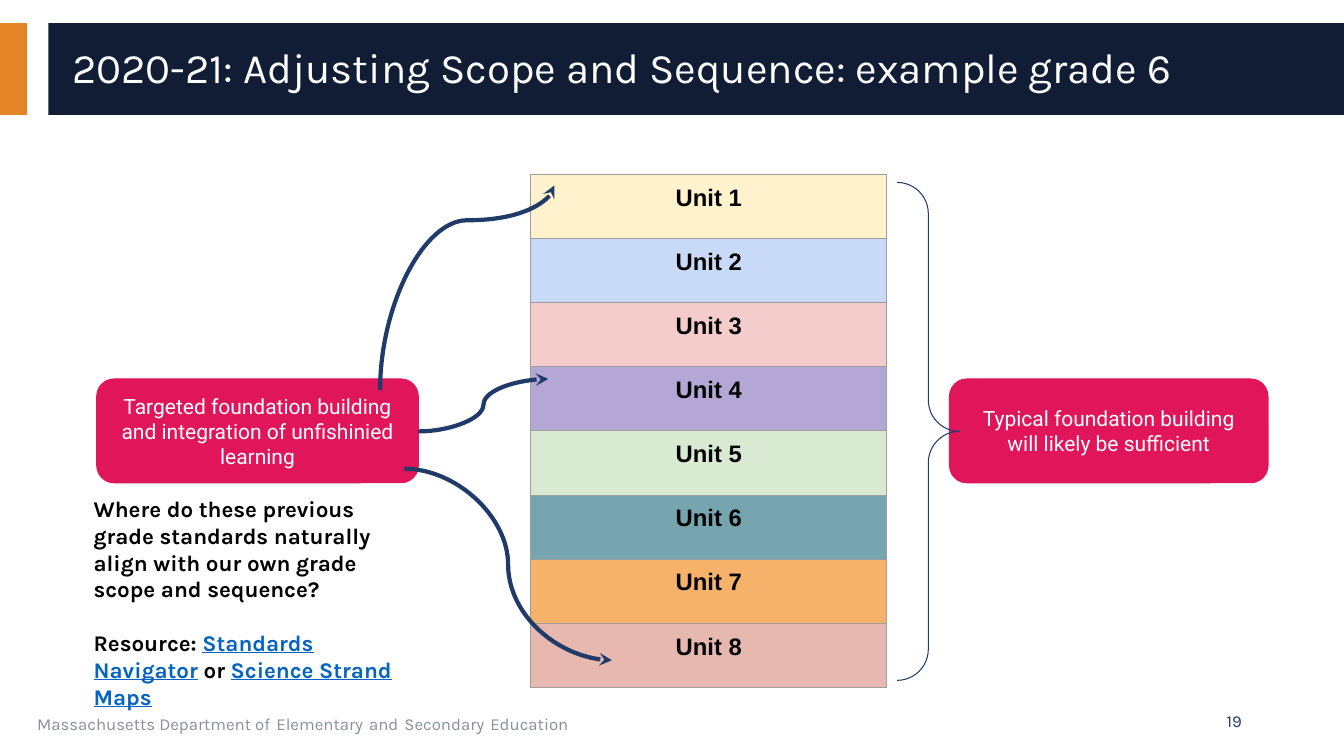
import pptx
import pptx.util
import pptx.dml.color
import pptx.enum.shapes
import pptx.enum.text
from lxml import etree
from pptx.oxml.ns import qn

Pt = pptx.util.Pt
KIND = pptx.enum.shapes.MSO_SHAPE
ALIGN = pptx.enum.text.PP_ALIGN
ANCHOR = pptx.enum.text.MSO_ANCHOR

HUES = {
    "orange": "E38526", "navy": "101D34", "blue": "203B6A", "pink": "E1165A",
    "white": "FFFFFF", "black": "000000", "gray": "8A8FA0", "rule": "9E9E9E",
    "link": "0563C1",
}
TITLE = "2020-21: Adjusting Scope and Sequence: example grade 6"
FOOTER = ["Massachusetts Department of", "Elementary", "and", "Secondary", "Education"]
NUMBER = "19"
UNITS = ["FFF2CC", "C9DAF8", "F4CCCC", "B4A7D6", "D9EAD3", "76A5AF", "F6B26B", "E6B8AF"]
QUESTION = "Where do these previous grade standards naturally align with our own grade scope and sequence?"
RESOURCE = [("Resource: ", False), ("Standards Navigator", True),
            (" or ", False), ("Science Strand Maps", True)]

# Places are percentages of the slide: left, top, width, height
BANDS = [("orange", (0, 3.07, 2.03, 12.13)), ("navy", (3.6, 3.07, 96.4, 12.13))]
PLACES = {
    "title": (4.65, 4.27, 93.3, 9.87),
    "footer": (2.03, 92.67, 63.3, 5.33),
    "number": (70.65, 92.67, 22.5, 5.33),
    "units": (39.5, 23.07, 26.48, 67.87),
    "brace": (66.75, 24.13, 4.65, 65.87),
    "note": (6.23, 64.13, 24.9, 28.53),
}
BOXES = [
    ("Typical foundation building will likely be sufficient", (70.65, 50.13, 23.7, 13.73)),
    ("Targeted foundation building and integration of unfishinied learning",
     (7.2, 50.13, 23.93, 13.73)),
]
# Start, end, share of the bend, whether the arrow sets off upward
ARROWS = [
    ((28.28, 51.6), (41.25, 24.53), 0.83, True),
    ((30.08, 62), (45.53, 87.33), 0.5, False),
    ((31.13, 57.07), (40.8, 50.13), 0.5, False),
]

deck = pptx.Presentation()
deck.slide_width = pptx.util.Inches(13.33)
deck.slide_height = pptx.util.Inches(7.5)
slide = deck.slides.add_slide(deck.slide_layouts[6])
shapes = slide.shapes


def rgb(hue):
    return pptx.dml.color.RGBColor.from_string(HUES.get(hue, hue))


def scale(*shares):
    """Turn alternating x and y percentages into lengths."""
    sides = (deck.slide_width, deck.slide_height)
    return [round(share * sides[i % 2] / 100) for i, share in enumerate(shares)]


def style(font, size, hue, name="Karla", bold=False):
    font.size, font.name, font.bold = Pt(size), name, bold
    font.color.rgb = rgb(hue)


def frame(shape, side, top, anchor=ANCHOR.TOP):
    body = shape.text_frame
    body.word_wrap = True
    body.margin_left = body.margin_right = pptx.util.Inches(side)
    body.margin_top = body.margin_bottom = pptx.util.Inches(top)
    body.vertical_anchor = anchor
    return body


def label(name, top=0.05, anchor=ANCHOR.TOP):
    return frame(shapes.add_textbox(*scale(*PLACES[name])), 0.1, top, anchor)


def draw(kind, place, fill=None, line=None):
    shape = shapes.add_shape(kind, *scale(*place))
    shape.shadow.inherit = False
    if fill:
        shape.fill.solid()
        shape.fill.fore_color.rgb = rgb(fill)
    else:
        shape.fill.background()
    if line:
        shape.line.color.rgb = rgb(line)
        shape.line.width = Pt(0.75)
    else:
        shape.line.fill.background()
    return shape


def edge(cell):
    """Rule all four sides of a cell; borders go ahead of its fill."""
    props = cell._tc.get_or_add_tcPr()
    for spot, side in enumerate(("a:lnL", "a:lnR", "a:lnT", "a:lnB")):
        line = etree.Element(qn(side), w=str(Pt(0.75)))
        fill = etree.SubElement(line, qn("a:solidFill"))
        etree.SubElement(fill, qn("a:srgbClr"), val=HUES["rule"])
        props.insert(spot, line)


def arrow(start, end, bend, upward):
    x1, y1, x2, y2 = scale(*start, *end)
    if upward:
        # A quarter turn swaps the width and height about the same centre
        mx, my = (x1 + x2) // 2, (y1 + y2) // 2
        dx, dy = abs(y2 - y1) // 2, abs(x2 - x1) // 2
        x1, y1, x2, y2 = mx - dx, my - dy, mx + dx, my + dy
    link = shapes.add_connector(pptx.enum.shapes.MSO_CONNECTOR.CURVE, x1, y1, x2, y2)
    link.line.color.rgb = rgb("blue")
    link.line.width = Pt(3)
    props = link._element.spPr
    if upward:
        props.find(qn("a:xfrm")).set("rot", str(270 * 60000))
    guides = props.find(qn("a:prstGeom")).get_or_add_avLst()
    etree.SubElement(guides, qn("a:gd"), name="adj1", fmla=f"val {round(bend * 100000)}")
    etree.SubElement(props.find(qn("a:ln")), qn("a:tailEnd"), type="stealth")
    etree.SubElement(props, qn("a:effectLst"))


for hue, place in BANDS:
    draw(KIND.RECTANGLE, place, hue)

para = label("footer").paragraphs[0]
for i, word in enumerate(FOOTER):
    if i:
        gap = para.add_run()
        gap.text = " "
        style(gap.font, 18, "blue")
    run = para.add_run()
    run.text = word
    style(run.font, 12, "gray")

place = scale(*PLACES["units"])
table = shapes.add_table(len(UNITS), 1, *place).table
table.first_row = table.horz_banding = False
for i, hue in enumerate(UNITS):
    table.rows[i].height = place[3] // len(UNITS)
    cell = table.cell(i, 0)
    cell.margin_left = cell.margin_right = pptx.util.Inches(0.1)
    cell.margin_top = cell.margin_bottom = pptx.util.Inches(0.1)
    cell.fill.solid()
    cell.fill.fore_color.rgb = rgb(hue)
    edge(cell)
    cell.text = f"Unit {i + 1}"
    para = cell.text_frame.paragraphs[0]
    para.alignment = ALIGN.CENTER
    style(para.font, 17, "black", "Arial", True)

para = label("title", anchor=ANCHOR.MIDDLE).paragraphs[0]
para.text = TITLE
para.line_spacing = 0.9
style(para.font, 30, "white")

para = label("number", anchor=ANCHOR.MIDDLE).paragraphs[0]
para.text = NUMBER
para.alignment = ALIGN.RIGHT
style(para.font, 12, "blue")

for text, place in BOXES:
    box = draw(KIND.ROUNDED_RECTANGLE, place, "pink", "pink")
    para = frame(box, 0.13, 0.13, ANCHOR.MIDDLE).paragraphs[0]
    para.text = text
    para.alignment = ALIGN.CENTER
    style(para.font, 15, "white", "Roboto")

brace = draw(KIND.RIGHT_BRACE, PLACES["brace"], line="blue")
brace.adjustments[0] = 0.5

for item in ARROWS:
    arrow(*item)

note = label("note", 0.1)
para = note.paragraphs[0]
para.text = QUESTION
style(para.font, 16, "black", bold=True)
para = note.add_paragraph()
para.space_before = Pt(19)
style(para.font, 16, "black", bold=True)
for text, linked in RESOURCE:
    run = para.add_run()
    run.text = text
    if linked:
        run.font.color.rgb = rgb("link")
        run.font.underline = True

deck.save("out.pptx")
